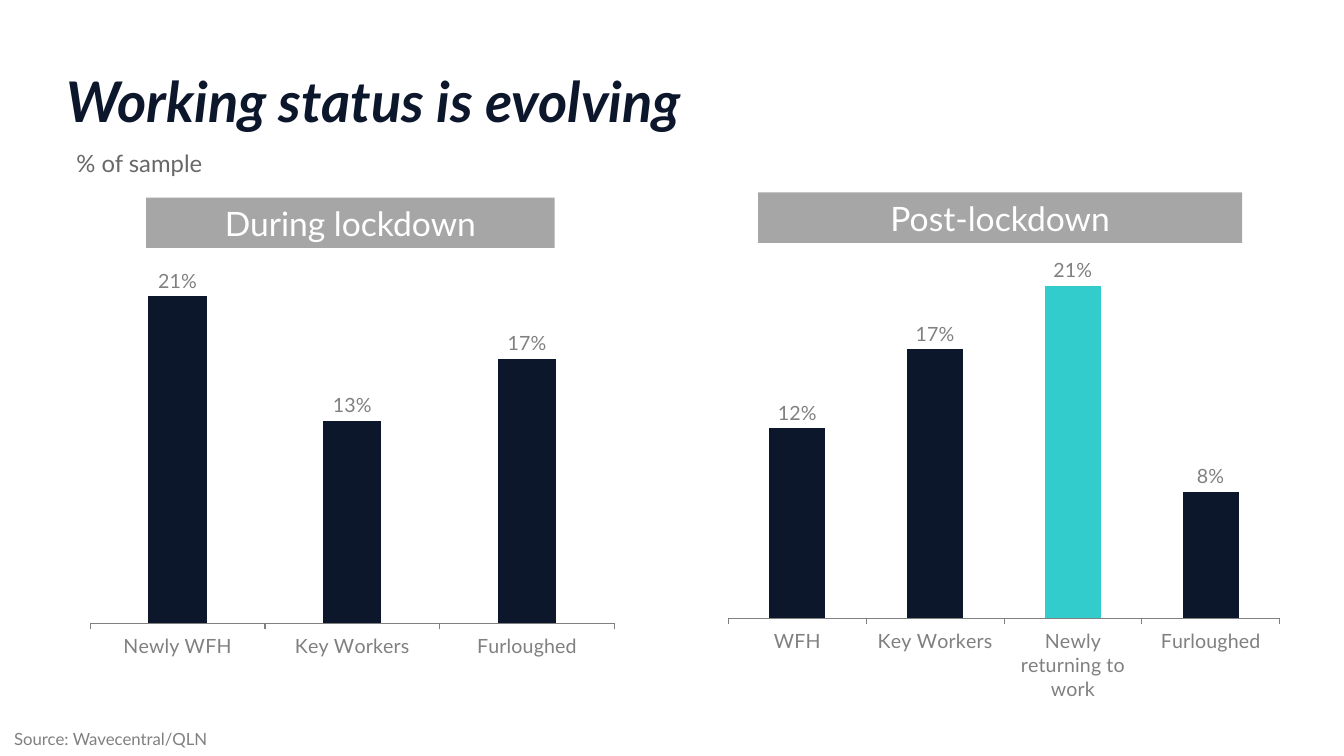
import dataclasses
from typing import Optional

import lxml.etree
import pptx
import pptx.chart.chart
import pptx.chart.data
import pptx.dml.color
import pptx.enum.chart
import pptx.enum.shapes
import pptx.enum.text
import pptx.oxml.ns
import pptx.slide
import pptx.text.text
import pptx.util

RGBColor = pptx.dml.color.RGBColor
NAVY = RGBColor(0x0D, 0x17, 0x2C)
TEAL = RGBColor(0x33, 0xCC, 0xCC)
BANNER_GREY = RGBColor(0xA6, 0xA6, 0xA6)
LABEL_GREY = RGBColor(0x80, 0x80, 0x80)
SUBTITLE_GREY = RGBColor(0x68, 0x68, 0x68)
CHART_TEXT = RGBColor(0x3F, 0x3F, 0x3F)
WHITE = RGBColor(0xFF, 0xFF, 0xFF)

FONT = "Lato"
EMU_PER_PX = 9144  # 100 px to the inch


@dataclasses.dataclass(frozen=True)
class Box:
    left: int
    top: int
    width: int
    height: int

    def emu(self) -> tuple[int, ...]:
        return tuple(px(n) for n in dataclasses.astuple(self))


@dataclasses.dataclass(frozen=True)
class Label:
    text: str
    box: Box
    size: int
    color: RGBColor
    inset: tuple[int, int] = (10, 5)
    bold_italic: bool = False
    line_spacing: Optional[float] = None
    space_before: int = 0


@dataclasses.dataclass(frozen=True)
class Panel:
    heading: str
    banner: Box
    chart: Box
    values: dict[str, float]
    gap: int
    plot_top: float
    highlight: Optional[int] = None


LABELS = [
    Label("Working status is evolving", Box(66, 73, 1230, 70), 40, NAVY,
          inset=(0, 0), bold_italic=True, line_spacing=42.7),
    Label("% of sample", Box(66, 143, 1094, 40), 17, SUBTITLE_GREY, space_before=10),
    Label("Source: Wavecentral/QLN", Box(1, 716, 353, 34), 12, LABEL_GREY, inset=(13, 7)),
]

PANELS = [
    Panel("During lockdown", Box(145, 196, 405, 50), Box(89, 200, 545, 522),
          {"Newly WFH": 0.21, "Key Workers": 0.13, "Furloughed": 0.17},
          gap=200, plot_top=0.062),
    Panel("Post-lockdown", Box(752, 191, 480, 50), Box(722, 191, 573, 530),
          {"WFH": 0.12, "Key Workers": 0.17, "Newly returning to work": 0.21,
           "Furloughed": 0.08},
          gap=147, plot_top=0.057, highlight=2),
]


def px(n: int) -> int:
    return n * EMU_PER_PX


def set_font(font: pptx.text.text.Font, size: int, color: RGBColor, name: str = FONT) -> None:
    font.name = name
    font.size = pptx.util.Pt(size)
    font.color.rgb = color


def add_label(slide: pptx.slide.Slide, label: Label) -> None:
    tf = slide.shapes.add_textbox(*label.box.emu()).text_frame
    tf.word_wrap = True
    tf.margin_left = tf.margin_right = px(label.inset[0])
    tf.margin_top = tf.margin_bottom = px(label.inset[1])
    p = tf.paragraphs[0]
    p.text = label.text
    set_font(p.font, label.size, label.color)
    if label.bold_italic:
        p.font.bold = p.font.italic = True
    if label.line_spacing:
        p.line_spacing = pptx.util.Pt(label.line_spacing)
    if label.space_before:
        p.space_before = pptx.util.Pt(label.space_before)


def add_banner(slide: pptx.slide.Slide, text: str, box: Box) -> None:
    sp = slide.shapes.add_shape(pptx.enum.shapes.MSO_SHAPE.RECTANGLE, *box.emu())
    sp.shadow.inherit = False
    sp.fill.solid()
    sp.fill.fore_color.rgb = BANNER_GREY
    sp.line.fill.background()
    tf = sp.text_frame
    tf.vertical_anchor = pptx.enum.text.MSO_ANCHOR.MIDDLE
    p = tf.paragraphs[0]
    p.text = text
    p.alignment = pptx.enum.text.PP_ALIGN.CENTER
    set_font(p.font, 24, WHITE)


def place_plot(chart: pptx.chart.chart.Chart, top: float) -> None:
    """Fix the inner plot area as fractions of the chart frame."""
    qn = pptx.oxml.ns.qn
    area = chart.element.find(".//" + qn("c:plotArea"))
    for old in area.findall(qn("c:layout")):
        area.remove(old)
    layout = lxml.etree.Element(qn("c:layout"))
    manual = lxml.etree.SubElement(layout, qn("c:manualLayout"))
    settings = {"layoutTarget": "inner", "xMode": "edge", "yMode": "edge",
                "x": 0, "y": top, "w": 0.955, "h": 0.74}
    for tag, value in settings.items():
        lxml.etree.SubElement(manual, qn("c:" + tag)).set("val", str(value))
    area.insert(0, layout)


def add_column_chart(slide: pptx.slide.Slide, panel: Panel) -> None:
    xl = pptx.enum.chart
    data = pptx.chart.data.CategoryChartData(number_format="0%")
    data.categories = list(panel.values)
    data.add_series("Series 1", list(panel.values.values()))
    chart = slide.shapes.add_chart(
        xl.XL_CHART_TYPE.COLUMN_CLUSTERED, *panel.chart.emu(), data).chart
    chart.has_legend = False
    chart.has_title = False
    set_font(chart.font, 18, CHART_TEXT, "Arial")
    place_plot(chart, panel.plot_top)

    value_axis = chart.value_axis
    value_axis.minimum_scale, value_axis.maximum_scale = 0, 0.25
    value_axis.has_major_gridlines = False
    value_axis.visible = False

    category_axis = chart.category_axis
    category_axis.major_tick_mark = xl.XL_TICK_MARK.OUTSIDE
    category_axis.format.line.color.rgb = LABEL_GREY
    category_axis.format.line.width = pptx.util.Pt(0.75)
    set_font(category_axis.tick_labels.font, 14, LABEL_GREY)

    plot = chart.plots[0]
    plot.gap_width = panel.gap
    plot.vary_by_categories = False
    series = plot.series[0]
    series.format.fill.solid()
    series.format.fill.fore_color.rgb = NAVY
    if panel.highlight is not None:
        fill = series.points[panel.highlight].format.fill
        fill.solid()
        fill.fore_color.rgb = TEAL

    labels = series.data_labels
    labels.show_value = True
    labels.position = xl.XL_LABEL_POSITION.OUTSIDE_END
    labels.number_format = "0%"
    labels.number_format_is_linked = False
    set_font(labels.font, 14, LABEL_GREY)


def main() -> None:
    prs = pptx.Presentation()
    prs.slide_width, prs.slide_height = px(1333), px(750)
    slide = prs.slides.add_slide(prs.slide_layouts[6])
    for panel in PANELS:
        add_column_chart(slide, panel)
        add_banner(slide, panel.heading, panel.banner)
    for label in LABELS:
        add_label(slide, label)
    prs.save("out.pptx")


if __name__ == "__main__":
    main()
